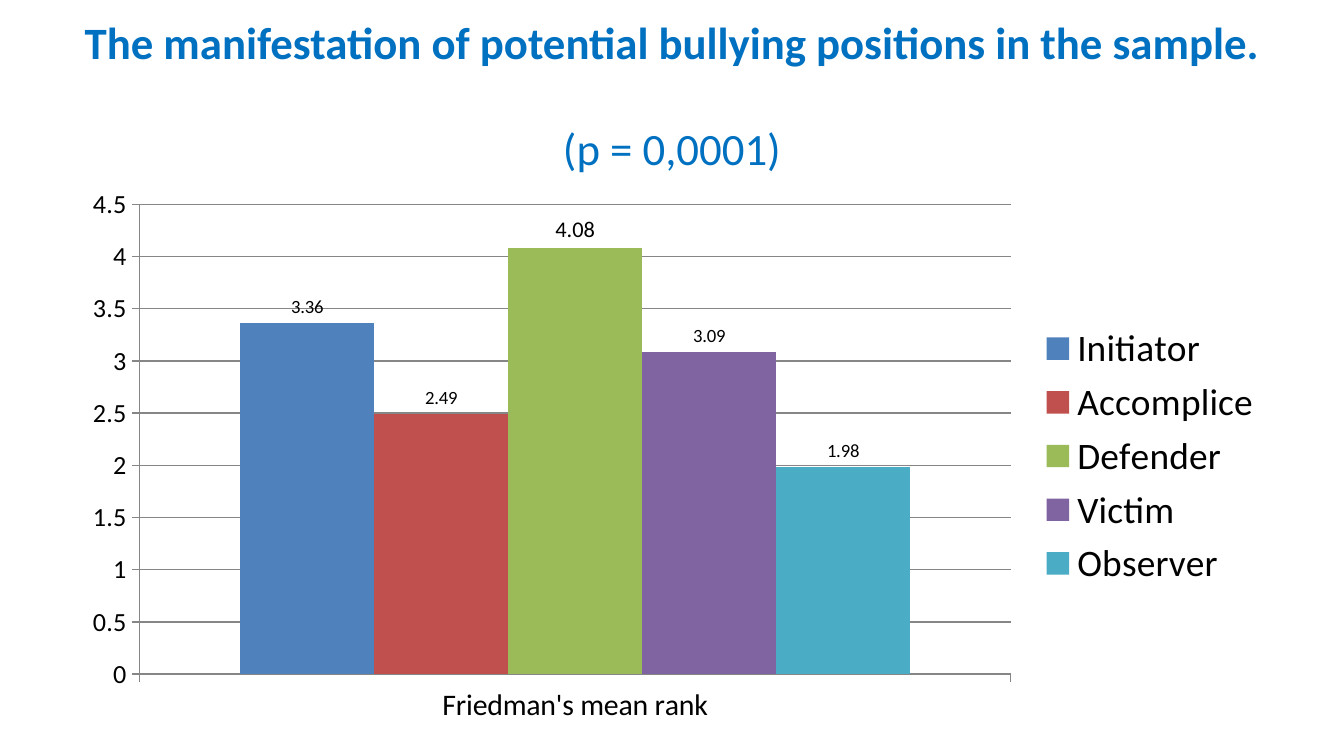
import dataclasses

import lxml.etree
import pptx
import pptx.chart.chart
import pptx.chart.data
import pptx.dml.color
import pptx.enum.chart
import pptx.enum.text
import pptx.oxml.ns
import pptx.util

SLIDE_WIDTH = pptx.util.Inches(10)
SLIDE_HEIGHT = SLIDE_WIDTH * 9 // 16
FONT_NAME = "Calibri"
GRID_COLOR = "868686"


@dataclasses.dataclass(frozen=True)
class Area:
    left: float
    top: float
    width: float
    height: float

    def lengths(self) -> tuple[int, int, int, int]:
        return (
            int(self.left * SLIDE_WIDTH),
            int(self.top * SLIDE_HEIGHT),
            int(self.width * SLIDE_WIDTH),
            int(self.height * SLIDE_HEIGHT),
        )


@dataclasses.dataclass(frozen=True)
class Position:
    name: str
    mean_rank: float
    color: str
    label_size: int = 10


TITLE_AREA = Area(0.05, 0.04, 0.9, 0.17)
CHART_AREA = Area(0.05, 7 / 30, 0.9, 0.74)
PLOT_SHARES = Area(0.06, 0.05, 0.72, 0.84)

POSITIONS = [
    Position("Initiator", 3.36, "4F81BD"),
    Position("Accomplice", 2.49, "C0504D"),
    Position("Defender", 4.08, "9BBB59", label_size=12),
    Position("Victim", 3.09, "8064A2"),
    Position("Observer", 1.98, "4BACC6"),
]


def rgb(color: str) -> pptx.dml.color.RGBColor:
    return pptx.dml.color.RGBColor.from_string(color)


def format_font(font, size: float, color: str = "000000", bold: bool = False) -> None:
    font.name = FONT_NAME
    font.size = pptx.util.Pt(size)
    font.bold = bold
    font.color.rgb = rgb(color)


def write_text(paragraph, text: str, *, size: float, color: str,
               bold: bool = False, space_before: float = 0) -> None:
    paragraph.alignment = pptx.enum.text.PP_ALIGN.CENTER
    paragraph.space_before = pptx.util.Pt(space_before)
    run = paragraph.add_run()
    run.text = text
    format_font(run.font, size, color, bold)


def draw_title(slide) -> None:
    title = slide.shapes.title
    title.left, title.top, title.width, title.height = TITLE_AREA.lengths()
    frame = title.text_frame
    frame.word_wrap = True
    frame.auto_size = pptx.enum.text.MSO_AUTO_SIZE.NONE
    frame.vertical_anchor = pptx.enum.text.MSO_ANCHOR.MIDDLE
    write_text(frame.paragraphs[0],
               "The manifestation of potential bullying positions in the sample.",
               size=24, color="0070C0", bold=True)
    write_text(frame.add_paragraph(), "(p = 0,0001)",
               size=24, color="0070C0", space_before=28)


def place_plot(chart: pptx.chart.chart.Chart, area: Area) -> None:
    qualified = pptx.oxml.ns.qn
    plot_area = chart.element.find(".//" + qualified("c:plotArea"))
    layout = plot_area.find(qualified("c:layout"))
    if layout is None:
        layout = lxml.etree.Element(qualified("c:layout"))
        plot_area.insert(0, layout)
    manual = lxml.etree.SubElement(layout, qualified("c:manualLayout"))
    settings = {
        "layoutTarget": "inner", "xMode": "edge", "yMode": "edge",
        "x": area.left, "y": area.top, "w": area.width, "h": area.height,
    }
    for name, value in settings.items():
        lxml.etree.SubElement(manual, qualified("c:" + name)).set("val", str(value))


def format_axis(axis, size: float) -> None:
    axis.major_tick_mark = pptx.enum.chart.XL_TICK_MARK.OUTSIDE
    axis.minor_tick_mark = pptx.enum.chart.XL_TICK_MARK.NONE
    axis.format.line.color.rgb = rgb(GRID_COLOR)
    format_font(axis.tick_labels.font, size)


def format_series(series, position: Position) -> None:
    series.format.fill.solid()
    series.format.fill.fore_color.rgb = rgb(position.color)
    labels = series.data_labels
    labels.show_value = True
    labels.position = pptx.enum.chart.XL_LABEL_POSITION.OUTSIDE_END
    format_font(labels.font, position.label_size)


def draw_chart(slide) -> None:
    chart_data = pptx.chart.data.CategoryChartData()
    chart_data.categories = ["Friedman's mean rank"]
    for position in POSITIONS:
        chart_data.add_series(position.name, [position.mean_rank])
    chart = slide.shapes.add_chart(
        pptx.enum.chart.XL_CHART_TYPE.COLUMN_CLUSTERED,
        *CHART_AREA.lengths(), chart_data).chart
    chart.has_title = False
    format_font(chart.font, 10)

    plot = chart.plots[0]
    plot.gap_width = 150
    plot.overlap = 0
    plot.vary_by_categories = False
    for series, position in zip(plot.series, POSITIONS):
        format_series(series, position)

    format_axis(chart.category_axis, 16)
    value_axis = chart.value_axis
    format_axis(value_axis, 14)
    value_axis.minimum_scale = 0
    value_axis.maximum_scale = 4.5
    value_axis.major_unit = 0.5
    value_axis.has_major_gridlines = True
    value_axis.major_gridlines.format.line.color.rgb = rgb(GRID_COLOR)

    chart.has_legend = True
    chart.legend.position = pptx.enum.chart.XL_LEGEND_POSITION.RIGHT
    chart.legend.include_in_layout = False
    format_font(chart.legend.font, 20)
    place_plot(chart, PLOT_SHARES)


def main() -> None:
    presentation = pptx.Presentation()
    presentation.slide_width = SLIDE_WIDTH
    presentation.slide_height = SLIDE_HEIGHT
    slide = presentation.slides.add_slide(presentation.slide_layouts[5])
    draw_title(slide)
    draw_chart(slide)
    presentation.save("out.pptx")


if __name__ == "__main__":
    main()
